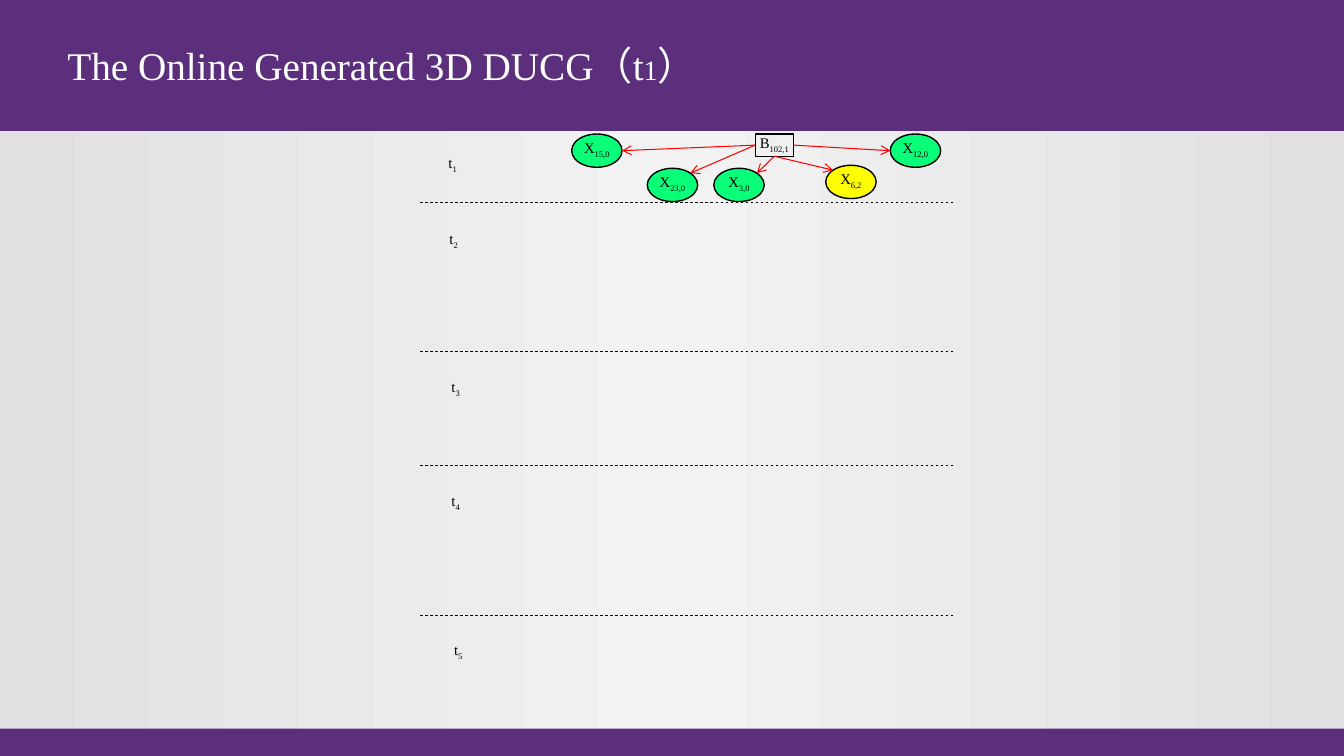
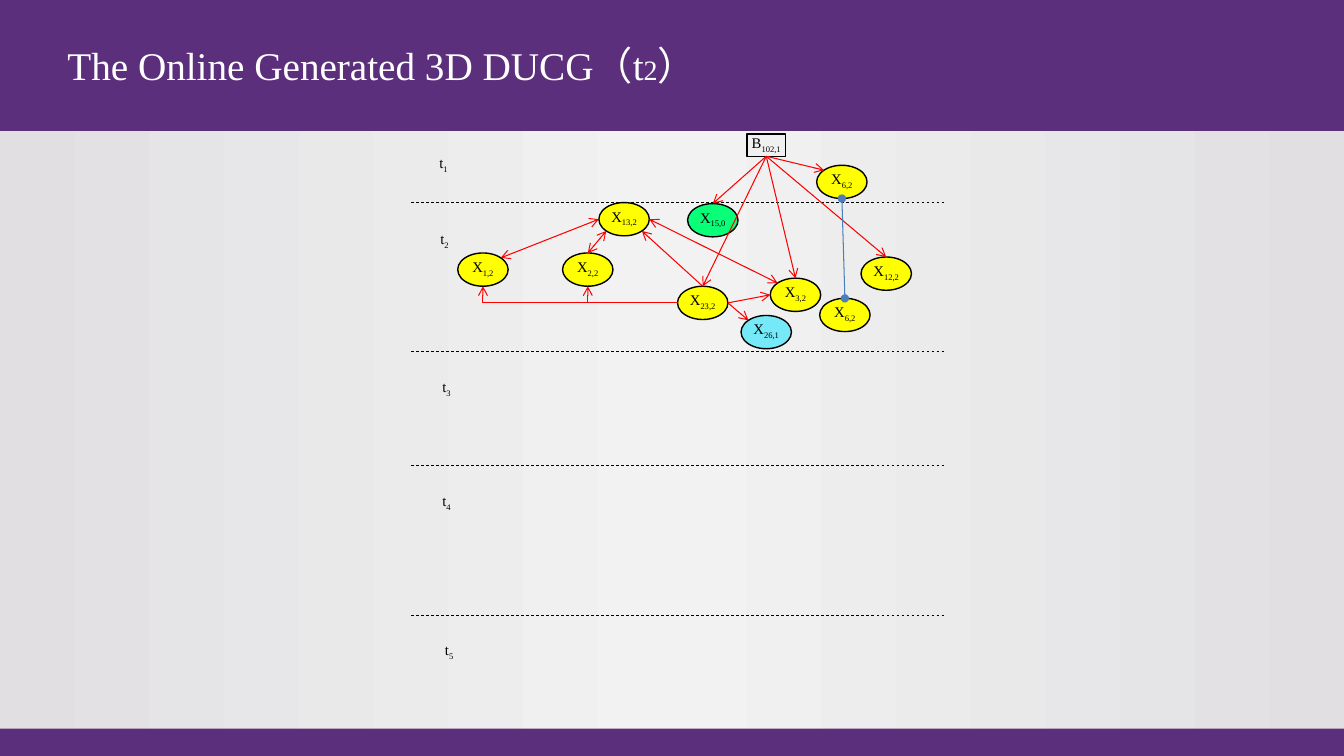
from copy import deepcopy
from math import sqrt

from lxml import etree
from pptx import Presentation
from pptx.dml.color import RGBColor
from pptx.enum import dml, shapes, text
from pptx.oxml import ns
from pptx.util import Inches, Pt

WIDE, HIGH = 13.33, 7.5
BAND, FOOT = 1.3, 0.27
FACE = "Times New Roman"
INK = {
    "band": "5C2F7D", "edge": "E1DFE2", "mid": "F2F2F2", "white": "FFFFFF",
    "black": "000000", "red": "FF0000", "blue": "4B7EBC",
    "green": "09FF78", "yellow": "FFFF00", "cyan": "76E9F8",
}
OVAL, ROOT = (0.5, 0.33), (0.38, 0.22)
SPAN = 5.29
RULES = (0.71, 2.19, 3.32, 4.8)
TIMES = ((0.18, 0.18), (0.19, 0.93), (0.21, 2.4), (0.21, 3.53), (0.21, 5.01))
SIDES = {"n": 0, "w": 1, "s": 2, "e": 3}
ENDS = {
    "to": (None, "arrow"), "both": ("arrow", "arrow"),
    "bend": (None, "arrow"), "same": ("oval", "oval"),
}

FIRST = {
    "B102,1": (3.32, 0.03, None),
    "X15,0": (1.5, 0.03, "green"),
    "X23,0": (2.25, 0.37, "green"),
    "X3,0": (2.91, 0.37, "green"),
    "X6,2": (4.02, 0.34, "yellow"),
    "X12,0": (4.66, 0.03, "green"),
}
FIRST_LINKS = (
    ("B102,1", "w", "X15,0", "e", "to"),
    ("B102,1", "w", "X23,0", "ne", "to"),
    ("B102,1", "s", "X3,0", "ne", "to"),
    ("B102,1", "s", "X6,2", "nw", "to"),
    ("B102,1", "e", "X12,0", "w", "to"),
)
SECOND = {
    "B102,1": (3.33, 0.03, None),
    "X6,2": (4.02, 0.34, "yellow"),
    "X13,2": (1.86, 0.71, "yellow"),
    "X15,0": (2.74, 0.72, "green"),
    "X1,2": (0.46, 1.21, "yellow"),
    "X2,2": (1.5, 1.21, "yellow"),
    "X12,2": (4.46, 1.25, "yellow"),
    "X3,2": (3.56, 1.46, "yellow"),
    "X23,2": (2.64, 1.54, "yellow"),
    "X6,2 later": (4.05, 1.66, "yellow"),
    "X26,1": (3.27, 1.83, "cyan"),
}
SECOND_LINKS = (
    ("B102,1", "s", "X15,0", "n", "to"),
    ("B102,1", "s", "X3,2", "n", "to"),
    ("B102,1", "s", "X23,2", "n", "to"),
    ("B102,1", "s", "X6,2", "nw", "to"),
    ("B102,1", "s", "X12,2", "n", "to"),
    ("X23,2", "e", "X3,2", "w", "to"),
    ("X23,2", "e", "X26,1", "nw", "to"),
    ("X23,2", "n", "X13,2", "se", "to"),
    ("X23,2", "w", "X1,2", "s", "bend"),
    ("X23,2", "w", "X2,2", "s", "bend"),
    ("X2,2", "n", "X13,2", "sw", "both"),
    ("X3,2", "nw", "X13,2", "e", "both"),
    ("X13,2", "w", "X1,2", "ne", "both"),
    ("X6,2", "s", "X6,2 later", "n", "same"),
)


def tint(name):
    """Return a named colour."""
    return RGBColor.from_string(INK[name])


def style(para, size, color, align=None):
    """Set the font and alignment of a paragraph."""
    para.font.name = FACE
    para.font.size = Pt(size)
    para.font.color.rgb = tint(color)
    para.alignment = align


def index(para, base, sub, align):
    """Write a symbol with its subscript."""
    para.add_run().text = base
    run = para.add_run()
    run.text = sub
    run._r.get_or_add_rPr().set("baseline", "-25000")
    style(para, 10.5, "black", align)


def form(slide, kind, box, fill, line=None):
    """Add a preset shape with plain fill and line."""
    item = slide.shapes.add_shape(kind, *map(Inches, box))
    item.shadow.inherit = False
    if fill:
        item.fill.solid()
        item.fill.fore_color.rgb = tint(fill)
    else:
        item.fill.background()
    if line:
        item.line.color.rgb = tint(line)
        item.line.width = Pt(1)
    else:
        item.line.fill.background()
    return item


def wire(slide, start, end, color, width, dash=None, ends=(None, None)):
    """Add a straight line with optional dash and arrowheads."""
    item = slide.shapes.add_connector(
        shapes.MSO_CONNECTOR.STRAIGHT, *map(Inches, (*start, *end)))
    item.line.color.rgb = tint(color)
    item.line.width = Pt(width)
    if dash:
        item.line.dash_style = dash
    props = item.element.spPr
    for tag, head in zip(("a:headEnd", "a:tailEnd"), ends):
        if head:
            etree.SubElement(props.find(ns.qn("a:ln")), ns.qn(tag), type=head)
    etree.SubElement(props, ns.qn("a:effectLst"))
    return item


def bend(item):
    """Turn a line into an elbow that runs left and then up."""
    props = item.element.spPr
    props.find(ns.qn("a:prstGeom")).set("prst", "bentConnector2")
    frame = props.find(ns.qn("a:xfrm"))
    for flip in ("flipH", "flipV"):
        frame.attrib.pop(flip, None)
    frame.set("rot", "10800000")


def site(box, side):
    """Return the point of a node's outline at a compass side."""
    x, y, w, h = box
    dx = ("e" in side) - ("w" in side)
    dy = ("s" in side) - ("n" in side)
    far = sqrt(dx * dx + dy * dy)
    return x + w / 2 * (1 + dx / far), y + h / 2 * (1 + dy / far)


def node(slide, key, box, fill):
    """Add a root box or a variable oval with its label."""
    kind = shapes.MSO_SHAPE.OVAL if fill else shapes.MSO_SHAPE.RECTANGLE
    item = form(slide, kind, box, fill, "black")
    body = item.text_frame
    body.margin_left = body.margin_right = 0
    body.margin_top = body.margin_bottom = 0
    body.vertical_anchor = text.MSO_ANCHOR.TOP
    name = key.split()[0]
    index(body.paragraphs[0], name[0], name[1:], text.PP_ALIGN.CENTER)
    return item


def grid(slide, left, top):
    """Draw the time labels and the dashed rules between them."""
    for y in RULES:
        wire(slide, (left, top + y), (left + SPAN, top + y), "black", 0.5,
             dml.MSO_LINE.DASH)
    for step, (x, y) in enumerate(TIMES, 1):
        box = slide.shapes.add_textbox(
            *map(Inches, (left + x, top + y, 0.33, 0.33)))
        box.text_frame.word_wrap = True
        last = step == len(TIMES)
        align = text.PP_ALIGN.CENTER if last else text.PP_ALIGN.JUSTIFY
        index(box.text_frame.paragraphs[0], "t", str(step), align)


def graph(slide, left, top, nodes, links):
    """Draw the nodes and join them."""
    boxes, items = {}, {}
    for key, (x, y, fill) in nodes.items():
        boxes[key] = (left + x, top + y, *(OVAL if fill else ROOT))
        items[key] = node(slide, key, boxes[key], fill)
    for one, out, two, into, kind in links:
        color = "blue" if kind == "same" else "red"
        item = wire(slide, site(boxes[one], out), site(boxes[two], into),
                    color, 0.75, ends=ENDS[kind])
        if nodes[one][2] is None:
            item.begin_connect(items[one], SIDES[out])
        if kind == "bend":
            bend(item)


def frame(slide, step):
    """Draw the bands and the title."""
    for y, h in ((0, BAND), (HIGH - FOOT, FOOT)):
        form(slide, shapes.MSO_SHAPE.RECTANGLE, (0, y, WIDE, h), "band")
    box = slide.shapes.add_textbox(*map(Inches, (0.57, 0.38, 6.92, 0.53)))
    body = box.text_frame
    body.word_wrap = True
    body.vertical_anchor = text.MSO_ANCHOR.MIDDLE
    para = body.paragraphs[0]
    for part in ("The Online Generated 3D DUCG（t", str(step), "）"):
        para.add_run().text = part
    style(para, 28, "white")
    para.runs[1].font.size = Pt(20)


def shade(master):
    """Give the master its three-stop gradient."""
    fill = master.background.fill
    fill.gradient()
    fill.gradient_angle = 0
    stop = next(master.element.iter(ns.qn("a:gs")))
    stop.addnext(deepcopy(stop))
    stops = ((0, "edge"), (0.5, "mid"), (1, "edge"))
    for stop, (place, color) in zip(fill.gradient_stops, stops):
        stop.position = place
        stop.color.rgb = tint(color)


def main():
    """Build and save the deck."""
    deck = Presentation()
    deck.slide_width, deck.slide_height = Inches(WIDE), Inches(HIGH)
    shade(deck.slide_master)
    plans = ((4.17, FIRST, FIRST_LINKS), (4.08, SECOND, SECOND_LINKS))
    for step, (left, nodes, links) in enumerate(plans, 1):
        slide = deck.slides.add_slide(deck.slide_layouts[6])
        frame(slide, step)
        grid(slide, left, BAND)
        graph(slide, left, BAND, nodes, links)
    deck.save("out.pptx")


if __name__ == "__main__":
    main()
